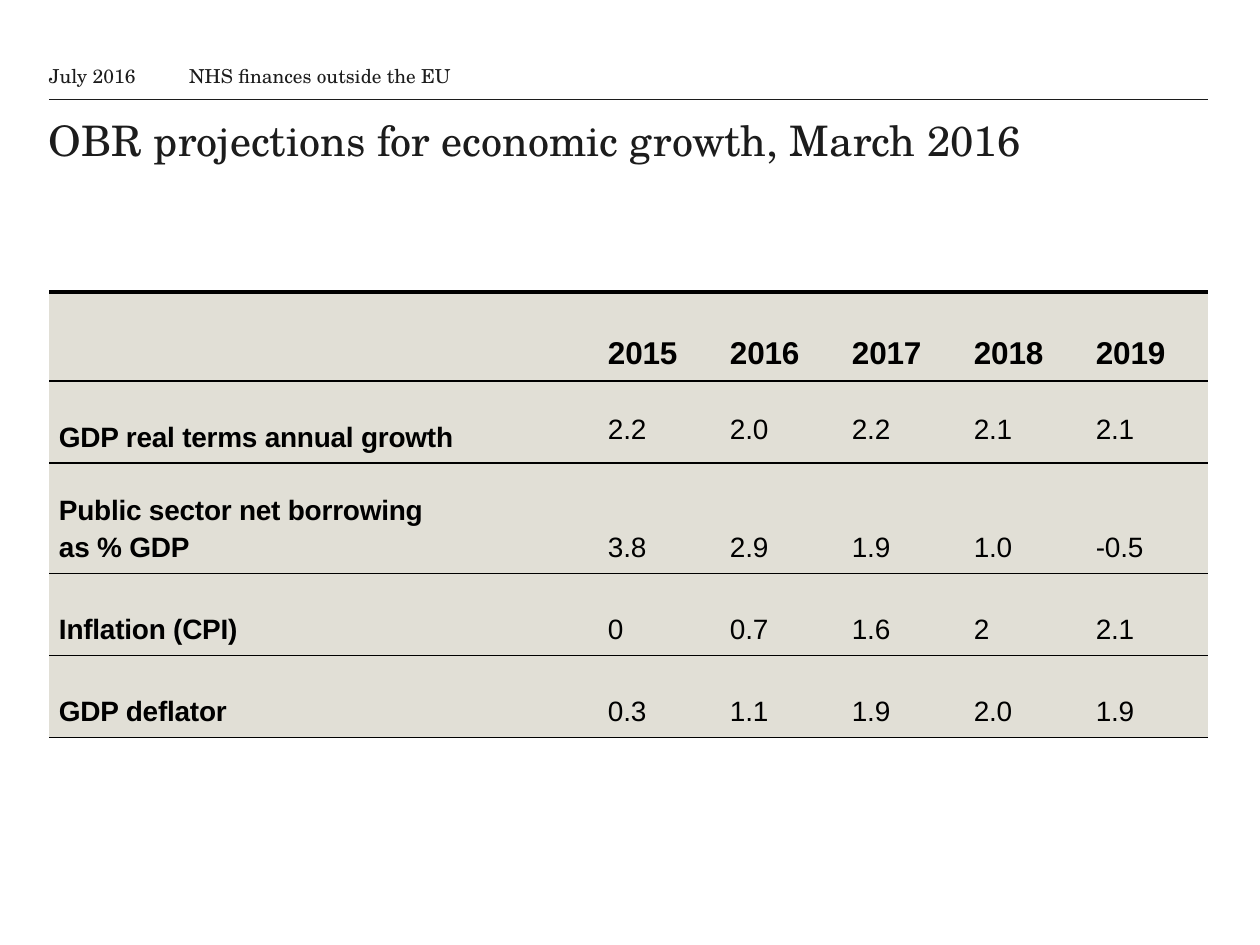
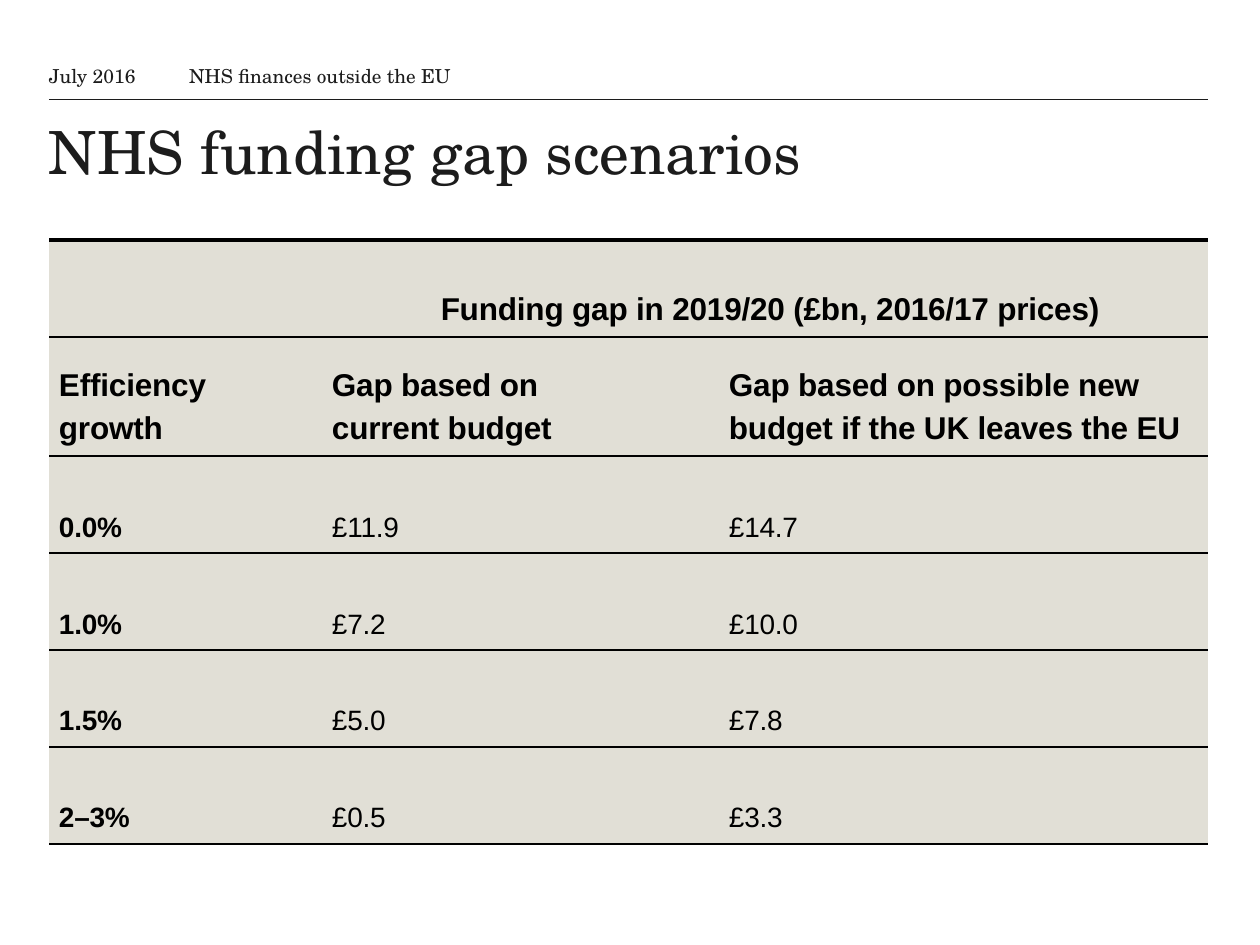
import pptx
import pptx.dml.color
import pptx.enum.shapes
import pptx.enum.text
import pptx.oxml
import pptx.oxml.ns
import pptx.util
import lxml.etree

COLOURS = {"ink": "1C1C1C", "black": "000000", "stone": "E1DFD6"}
SERIF, SANS = "TeX Gyre Schola", "Arial"
PX = 914400 / 126
LEFT, WIDTH = 49, 1159
RULE_TOP = 99
CELL_LEFT, CELL_BOTTOM = 10, 10

DATE = "July 2016"
REPORT = "NHS finances outside the EU"

SLIDES = [
    {
        "title": "OBR projections for economic growth, March 2016",
        "title_size": 24,
        "top": 292,
        "columns": [549] + [122] * 5,
        "heights": [89, 82, 104, 82, 82],
        "cell_top": 20,
        "heading_rows": 1,
        "middle_rows": [1],
        "spans": [],
        "rows": [
            ["", "2015", "2016", "2017", "2018", "2019"],
            ["GDP real terms annual growth", "2.2", "2.0", "2.2", "2.1", "2.1"],
            ["Public sector net borrowing \nas % GDP", "3.8", "2.9", "1.9", "1.0", "-0.5"],
            ["Inflation (CPI)", "0", "0.7", "1.6", "2", "2.1"],
            ["GDP deflator", "0.3", "1.1", "1.9", "2.0", "1.9"],
        ],
    },
    {
        "title": "NHS funding gap scenarios",
        "title_size": 34,
        "top": 240,
        "columns": [273, 397, 489],
        "heights": [97, 119] + [97] * 4,
        "cell_top": 15,
        "heading_rows": 2,
        "middle_rows": [],
        "spans": [(0, 1, 2)],
        "rows": [
            ["", "Funding gap in 2019/20 (£bn, 2016/17 prices)", ""],
            ["Efficiency\ngrowth", "Gap based on \ncurrent budget",
             "Gap based on possible new budget if the UK leaves the EU"],
            ["0.0%", "£11.9", "£14.7"],
            ["1.0%", "£7.2", "£10.0"],
            ["1.5%", "£5.0", "£7.8"],
            ["2–3%", "£0.5", "£3.3"],
        ],
    },
]


def px(length):
    return round(length * PX)


def rgb(name):
    return pptx.dml.color.RGBColor.from_string(COLOURS[name])


def style_runs(paragraph, font_name, size, colour, bold=False):
    for run in paragraph.runs:
        run.font.name = font_name
        run.font.size = pptx.util.Pt(size)
        run.font.bold = bold
        run.font.color.rgb = rgb(colour)


def add_label(slide, text, left, top, width, height, size, anchor):
    frame = slide.shapes.add_textbox(px(left), px(top), px(width), px(height)).text_frame
    frame.word_wrap = True
    frame.vertical_anchor = anchor
    frame.margin_left = frame.margin_right = frame.margin_top = frame.margin_bottom = 0
    frame.text = text
    style_runs(frame.paragraphs[0], SERIF, size, "ink")


def add_header(slide, title, title_size):
    rule = slide.shapes.add_connector(
        pptx.enum.shapes.MSO_CONNECTOR.STRAIGHT,
        px(LEFT), px(RULE_TOP), px(LEFT + WIDTH), px(RULE_TOP))
    rule.line.color.rgb = rgb("ink")
    rule.line.width = pptx.util.Pt(0.5)
    lxml.etree.SubElement(rule._element.spPr, pptx.oxml.ns.qn("a:effectLst"))
    top = pptx.enum.text.MSO_ANCHOR.TOP
    bottom = pptx.enum.text.MSO_ANCHOR.BOTTOM
    add_label(slide, title, LEFT, 115, WIDTH, title_size * 2, title_size, top)
    add_label(slide, DATE, LEFT, 49, 129, 38, 11, bottom)
    add_label(slide, REPORT, 189, 49, 800, 38, 11, bottom)


def set_borders(cell, top_width):
    properties = cell._tc.get_or_add_tcPr()
    for side, width in (("lnL", 0), ("lnR", 0), ("lnT", top_width), ("lnB", 1)):
        line = lxml.etree.SubElement(properties, pptx.oxml.ns.qn("a:" + side))
        line.set("w", str(pptx.util.Pt(width)))
        if width:
            fill = lxml.etree.SubElement(line, pptx.oxml.ns.qn("a:solidFill"))
            colour = lxml.etree.SubElement(fill, pptx.oxml.ns.qn("a:srgbClr"))
            colour.set("val", COLOURS["black"])
        else:
            lxml.etree.SubElement(line, pptx.oxml.ns.qn("a:noFill"))


def fill_cell(cell, text, content, row, column):
    set_borders(cell, 1 if row else 2.25)
    cell.fill.solid()
    cell.fill.fore_color.rgb = rgb("stone")
    cell.margin_left, cell.margin_right = px(CELL_LEFT), 0
    cell.margin_top, cell.margin_bottom = px(content["cell_top"]), px(CELL_BOTTOM)
    centred = row in content["middle_rows"] and column > 0
    anchors = pptx.enum.text.MSO_ANCHOR
    cell.vertical_anchor = anchors.MIDDLE if centred else anchors.BOTTOM
    if not text:
        return
    paragraph = cell.text_frame.paragraphs[0]
    paragraph.text = text
    paragraph.line_spacing = 1.2
    paragraph.space_after = pptx.util.Pt(4.2)
    heading = row < content["heading_rows"]
    style_runs(paragraph, SANS, 18 if heading else 16, "black", heading or column == 0)
    for run in paragraph.runs:
        run.font._element.set("spc", "-10")


def add_figures(slide, content):
    rows, columns, heights = content["rows"], content["columns"], content["heights"]
    figures = slide.shapes.add_table(
        len(rows), len(columns), px(LEFT), px(content["top"]),
        px(sum(columns)), px(sum(heights))).table
    figures.first_row = figures.horz_banding = False
    for column, width in zip(figures.columns, columns):
        column.width = px(width)
    for row, height in zip(figures.rows, heights):
        row.height = px(height)
    for r, row in enumerate(rows):
        for c, text in enumerate(row):
            fill_cell(figures.cell(r, c), text, content, r, c)
    for row, first, last in content["spans"]:
        heading = figures.cell(row, first)
        heading.merge(figures.cell(row, last))
        heading.text_frame.paragraphs[0].alignment = pptx.enum.text.PP_ALIGN.CENTER


def main():
    deck = pptx.Presentation()
    deck.slide_width, deck.slide_height = px(1260), px(945)
    for content in SLIDES:
        slide = deck.slides.add_slide(deck.slide_layouts[6])
        add_header(slide, content["title"], content["title_size"])
        add_figures(slide, content)
    deck.save("out.pptx")


if __name__ == "__main__":
    main()
